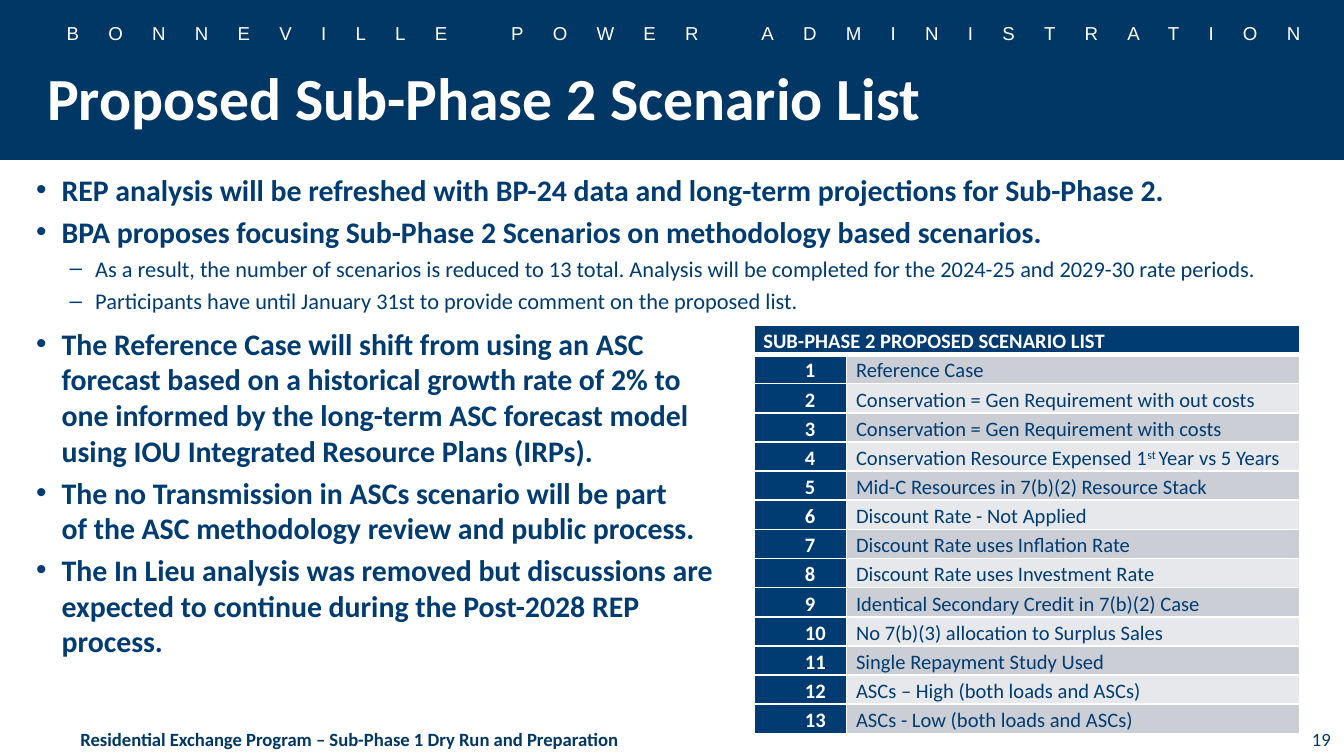
from dataclasses import dataclass

from lxml.etree import SubElement
from pptx import Presentation
from pptx.dml.color import RGBColor
from pptx.enum.shapes import MSO_SHAPE
from pptx.enum.text import MSO_ANCHOR, PP_ALIGN
from pptx.oxml.ns import qn
from pptx.util import Inches, Pt


@dataclass(frozen=True)
class Theme:
    band: str = "013765"
    navy: str = "003C71"
    white: str = "FFFFFF"
    row_dark: str = "CCCED5"
    row_light: str = "E7E8EB"
    body_font: str = "Calibri"
    banner_font: str = "Arial"
    title_size: int = 32
    point_size: int = 16
    detail_size: int = 12
    table_size: int = 11
    small_size: int = 10


THEME = Theme()

POINTS = [
    (0, 3, "REP analysis will be refreshed with BP-24 data and long-term projections for Sub-Phase 2."),
    (0, 3, "BPA proposes focusing Sub-Phase 2 Scenarios on methodology based scenarios."),
    (1, 3, "As a result, the number of scenarios is reduced to 13 total. "
           "Analysis will be completed for the 2024-25 and 2029-30 rate periods."),
    (1, 6, "Participants have until January 31st to provide comment on the proposed list."),
    (0, 3, "The Reference Case will shift from using an ASC \n"
           "forecast based on a historical growth rate of 2% to \n"
           "one informed by the long-term ASC forecast model \n"
           "using IOU Integrated Resource Plans (IRPs)."),
    (0, 3, "The no Transmission in ASCs scenario will be part \n"
           "of the ASC methodology review and public process."),
    (0, 3, "The In Lieu analysis was removed but discussions are \n"
           "expected to continue during the Post-2028 REP \n"
           "process."),
]

SCENARIOS = [
    ["Reference Case"],
    ["Conservation = Gen Requirement with out costs"],
    ["Conservation = Gen Requirement with costs"],
    ["Conservation Resource Expensed 1", "st ", "Year vs 5 Years"],
    ["Mid-C Resources in 7(b)(2) Resource Stack"],
    ["Discount Rate - Not Applied"],
    ["Discount Rate uses Inflation Rate"],
    ["Discount Rate uses Investment Rate"],
    ["Identical Secondary Credit in 7(b)(2) Case"],
    ["No 7(b)(3) allocation to Surplus Sales"],
    ["Single Repayment Study Used"],
    ["ASCs – High (both loads and ASCs)"],
    ["ASCs - Low (both loads and ASCs)"],
]


def add_run(paragraph, text, size, color, bold=False, font=THEME.body_font):
    run = paragraph.add_run()
    run.text = text
    run.font.name = font
    run.font.size = Pt(size)
    run.font.bold = bold
    run.font.color.rgb = RGBColor.from_string(color)
    return run


def add_text_box(slide, left, top, width, height, anchor=MSO_ANCHOR.TOP):
    shape = slide.shapes.add_textbox(Inches(left), Inches(top), Inches(width), Inches(height))
    shape.text_frame.word_wrap = True
    shape.text_frame.vertical_anchor = anchor
    return shape.text_frame


def add_label(slide, bounds, text, color, alignment=PP_ALIGN.LEFT, bold=False):
    paragraph = add_text_box(slide, *bounds, anchor=MSO_ANCHOR.MIDDLE).paragraphs[0]
    paragraph.alignment = alignment
    add_run(paragraph, text, THEME.small_size, color, bold)


def add_banner(slide):
    band = slide.shapes.add_shape(MSO_SHAPE.RECTANGLE, 0, Inches(-0.01), Inches(10), Inches(1.2))
    band.shadow.inherit = False
    band.fill.solid()
    band.fill.fore_color.rgb = RGBColor.from_string(THEME.band)
    band.line.fill.background()
    paragraph = add_text_box(slide, 0, 0.11, 10.17, 0.27).paragraphs[0]
    paragraph.alignment = PP_ALIGN.CENTER
    run = add_run(paragraph, "BONNEVILLE POWER ADMINISTRATION", THEME.small_size,
                  THEME.white, font=THEME.banner_font)
    run._r.get_or_add_rPr().set("spc", "1570")


def format_title(slide, text):
    title = slide.shapes.title
    title.left, title.top, title.width, title.height = map(Inches, (0.25, 0.38, 9.42, 0.68))
    title.text_frame.vertical_anchor = MSO_ANCHOR.MIDDLE
    paragraph = title.text_frame.paragraphs[0]
    paragraph.alignment = PP_ALIGN.LEFT
    add_run(paragraph, text, THEME.title_size, THEME.white, bold=True)
    slide.shapes._spTree.append(title._element)


def set_bullet(paragraph, level):
    properties = paragraph._p.get_or_add_pPr()
    properties.set("marL", str(Inches((0.19, 0.44)[level])))
    properties.set("indent", str(Inches(-0.19)))
    SubElement(properties, qn("a:buFont"), typeface="Arial")
    SubElement(properties, qn("a:buChar"), char="•–"[level])


def add_points(slide):
    frame = add_text_box(slide, 0.17, 1.23, 9.58, 4.14)
    for index, (level, space_after, text) in enumerate(POINTS):
        paragraph = frame.add_paragraph() if index else frame.paragraphs[0]
        set_bullet(paragraph, level)
        paragraph.level = level
        paragraph.space_after = Pt(space_after)
        size = THEME.detail_size if level else THEME.point_size
        for line_number, line in enumerate(text.split("\n")):
            if line_number:
                paragraph.add_line_break()
            add_run(paragraph, line, size, THEME.navy, bold=level == 0)


def set_borders(cell, bottom_width):
    properties = cell._tc.get_or_add_tcPr()
    for side, width in (("L", 1), ("R", 1), ("T", 1), ("B", bottom_width)):
        line = SubElement(properties, qn(f"a:ln{side}"), w=str(Pt(width)))
        fill = SubElement(line, qn("a:solidFill"))
        SubElement(fill, qn("a:srgbClr"), val=THEME.white)


def format_cell(cell, fill, bottom_width=1):
    set_borders(cell, bottom_width)
    cell.fill.solid()
    cell.fill.fore_color.rgb = RGBColor.from_string(fill)
    cell.margin_left = cell.margin_right = Inches(0.07)
    cell.margin_top = cell.margin_bottom = 0
    paragraph = cell.text_frame.paragraphs[0]
    paragraph.line_spacing = 1.15
    return paragraph


def add_scenario_table(slide):
    row_count = len(SCENARIOS) + 1
    table = slide.shapes.add_table(row_count, 2, Inches(5.61), Inches(2.42),
                                   Inches(4.06), Inches(2.95)).table
    for column, width in zip(table.columns, (0.69, 3.37)):
        column.width = Inches(width)
    for row in table.rows:
        row.height = Inches(2.95 / row_count)

    heading, spanned = table.rows[0].cells
    heading.merge(spanned)
    format_cell(spanned, THEME.navy, bottom_width=3)
    add_run(format_cell(heading, THEME.navy, bottom_width=3),
            "SUB-PHASE 2 PROPOSED SCENARIO LIST", THEME.table_size, THEME.white, bold=True)

    for number, parts in enumerate(SCENARIOS, start=1):
        paragraph = format_cell(table.cell(number, 0), THEME.navy)
        paragraph._p.get_or_add_pPr().set("indent", str(Inches(0.31)))
        add_run(paragraph, str(number), THEME.table_size, THEME.white, bold=True)
        paragraph = format_cell(table.cell(number, 1),
                                THEME.row_dark if number % 2 else THEME.row_light)
        for position, text in enumerate(parts):
            run = add_run(paragraph, text, THEME.table_size, THEME.navy)
            if position == 1:
                run._r.get_or_add_rPr().set("baseline", "30000")


def main():
    presentation = Presentation()
    presentation.slide_width = Inches(10)
    presentation.slide_height = Inches(10 * 9 / 16)
    slide = presentation.slides.add_slide(presentation.slide_layouts[5])
    add_banner(slide)
    add_label(slide, (0.5, 5.35, 5.5, 0.3),
              "Residential Exchange Program – Sub-Phase 1 Dry Run and Preparation",
              THEME.band, bold=True)
    add_points(slide)
    format_title(slide, "Proposed Sub-Phase 2 Scenario List")
    add_scenario_table(slide)
    add_label(slide, (7.67, 5.35, 2.33, 0.3), "19", THEME.band, PP_ALIGN.RIGHT)
    presentation.save("out.pptx")


if __name__ == "__main__":
    main()
